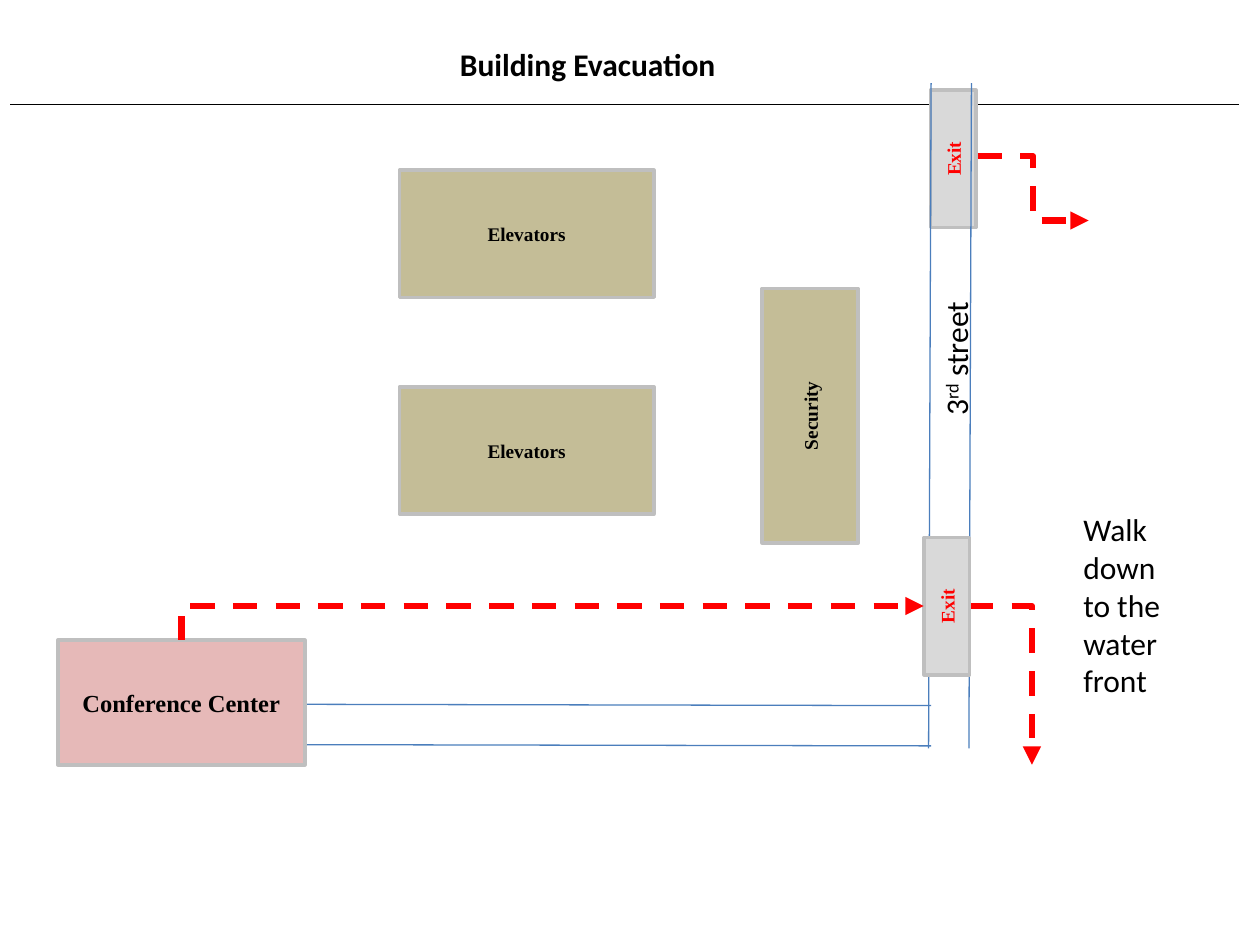
import pptx
import pptx.dml.color
import pptx.enum.dml
import pptx.enum.shapes
import pptx.enum.text
import pptx.oxml.ns
import pptx.util
from lxml import etree

COLORS = {
    "text": "000000", "route": "FF0000", "street": "4B7EBC", "border": "BFBFBF",
    "exit": "D9D9D9", "core": "C4BD97", "conference": "E6B9B8",
}
LABEL = {"name": "Times New Roman", "size": 11, "bold": True, "color": "text"}
NOTE = {"name": "Calibri", "size": 18, "bold": False, "color": "text"}
COLUMNS, ROWS = 100, 75


class FloorPlan:
    """Draw evacuation plan elements on a slide divided into columns and rows."""

    def __init__(self, presentation):
        """Add a title-only slide and measure its grid."""
        self.slide = presentation.slides.add_slide(presentation.slide_layouts[5])
        self.column = presentation.slide_width / COLUMNS
        self.row = presentation.slide_height / ROWS

    def lengths(self, *values):
        """Turn alternating columns and rows into slide lengths."""
        return [round(value * (self.row if index % 2 else self.column))
                for index, value in enumerate(values)]

    def color(self, name):
        """Return a named colour."""
        return pptx.dml.color.RGBColor.from_string(COLORS[name])

    def format_font(self, font, values):
        """Apply a dict of format values to a font."""
        for name, value in values.items():
            if name == "color":
                font.color.rgb = self.color(value)
            else:
                setattr(font, name, pptx.util.Pt(value) if name == "size" else value)

    def place(self, shape, left, top, width, height, turned=False):
        """Place a shape in its visible area, reading upwards if turned."""
        if turned:
            left, top = left + (width - height) / 2, top + (height - width) / 2
            width, height = height, width
            shape.rotation = 270
        names = ("left", "top", "width", "height")
        for name, value in zip(names, self.lengths(left, top, width, height)):
            setattr(shape, name, value)

    def fill_text(self, shape, runs, style, align, anchor, wrap=True):
        """Set (text, baseline) runs as the one paragraph of a shape."""
        frame = shape.text_frame
        frame.word_wrap = wrap
        frame.vertical_anchor = anchor
        paragraph = frame.paragraphs[0]
        paragraph.alignment = align
        for text, baseline in runs:
            run = paragraph.add_run()
            run.text = text
            self.format_font(run.font, style)
            if baseline:
                run._r.get_or_add_rPr().set("baseline", str(baseline * 1000))

    def room(self, text, area, fill, turned=False, **changes):
        """Draw a labelled, bordered rectangle."""
        shape = self.slide.shapes.add_shape(
            pptx.enum.shapes.MSO_SHAPE.RECTANGLE, *self.lengths(*area))
        self.place(shape, *area, turned)
        shape.shadow.inherit = False
        shape.fill.solid()
        shape.fill.fore_color.rgb = self.color(fill)
        shape.line.color.rgb = self.color("border")
        shape.line.width = pptx.util.Pt(2)
        self.fill_text(shape, [(text, 0)], {**LABEL, **changes},
                       pptx.enum.text.PP_ALIGN.CENTER, pptx.enum.text.MSO_ANCHOR.MIDDLE)

    def note(self, runs, area, shape=None, turned=False, wrap=False, **changes):
        """Set plain text in a new text box or in the given shape."""
        shape = shape or self.slide.shapes.add_textbox(*self.lengths(*area))
        self.place(shape, *area, turned)
        shape.text_frame.auto_size = pptx.enum.text.MSO_AUTO_SIZE.SHAPE_TO_FIT_TEXT
        self.fill_text(shape, runs, {**NOTE, **changes},
                       pptx.enum.text.PP_ALIGN.LEFT, pptx.enum.text.MSO_ANCHOR.TOP, wrap)

    def title(self, text, area):
        """Set the slide title."""
        self.note([(text, 0)], area, self.slide.shapes.title, bold=True)

    def line(self, begin, end, color, width=0.75, kind="STRAIGHT"):
        """Draw a connector without a shadow."""
        connector = self.slide.shapes.add_connector(
            getattr(pptx.enum.shapes.MSO_CONNECTOR, kind), *self.lengths(*begin, *end))
        connector.line.color.rgb = self.color(color)
        connector.line.width = pptx.util.Pt(width)
        etree.SubElement(connector._element.spPr, pptx.oxml.ns.qn("a:effectLst"))
        return connector

    def route(self, begin, end, bends, upward=False):
        """Draw a dashed escape route with an arrowhead and one or two bends."""
        if upward:
            middle_x, middle_y = (begin[0] + end[0]) / 2, (begin[1] + end[1]) / 2
            begin, end = [(middle_x + y - middle_y, middle_y - x + middle_x)
                          for x, y in (begin, end)]
        connector = self.line(begin, end, "route", 3.5, "ELBOW")
        connector.line.dash_style = pptx.enum.dml.MSO_LINE.DASH
        properties = connector._element.spPr
        properties.find(pptx.oxml.ns.qn("a:prstGeom")).set("prst", f"bentConnector{bends + 1}")
        if upward:
            properties.find(pptx.oxml.ns.qn("a:xfrm")).set("rot", "5400000")
        outline = properties.find(pptx.oxml.ns.qn("a:ln"))
        etree.SubElement(outline, pptx.oxml.ns.qn("a:tailEnd"), type="triangle")


def main():
    """Build the evacuation slide."""
    presentation = pptx.Presentation()
    presentation.slide_width = pptx.util.Inches(10)
    presentation.slide_height = pptx.util.Inches(7.5)
    plan = FloorPlan(presentation)

    plan.title("Building Evacuation", (35.5, 3.1, 22.5, 4))
    plan.line((0.8, 8.3), (98.3, 8.3), "text")
    plan.room("Exit", (73.85, 7.15, 3.6, 10.9), "exit", True, color="route")
    for x in (77.1, 73.9):
        plan.line((x, 6.6), (x - 0.2, 59.4), "street")
    plan.route((76.9, 48.1), (81.9, 60.7), 1)
    plan.room("Exit", (73.35, 42.65, 3.6, 10.9), "exit", True, color="route")
    for y in (59.2, 56):
        plan.line((73.9, y), (24.2, y - 0.1), "street")
    plan.route((77.6, 12.4), (86.4, 17.5), 2)
    for top in (13.5, 30.7):
        plan.room("Elevators", (31.7, top, 20.2, 10.1), "core")
    plan.room("Security", (60.5, 22.9, 7.6, 20.2), "core", True)
    plan.room("Conference Center", (4.6, 50.8, 19.6, 9.9), "conference", size=14)
    plan.route((14.4, 50.8), (73.3, 48.1), 1, upward=True)
    plan.note([("Walk down to the water front", 0)], (85, 40, 8.3, 16.2), wrap=True)
    plan.note([("3", 0), ("rd", 30), (" street", 0)], (73.85, 22.05, 4, 11.9), turned=True)
    presentation.save("out.pptx")


if __name__ == "__main__":
    main()
